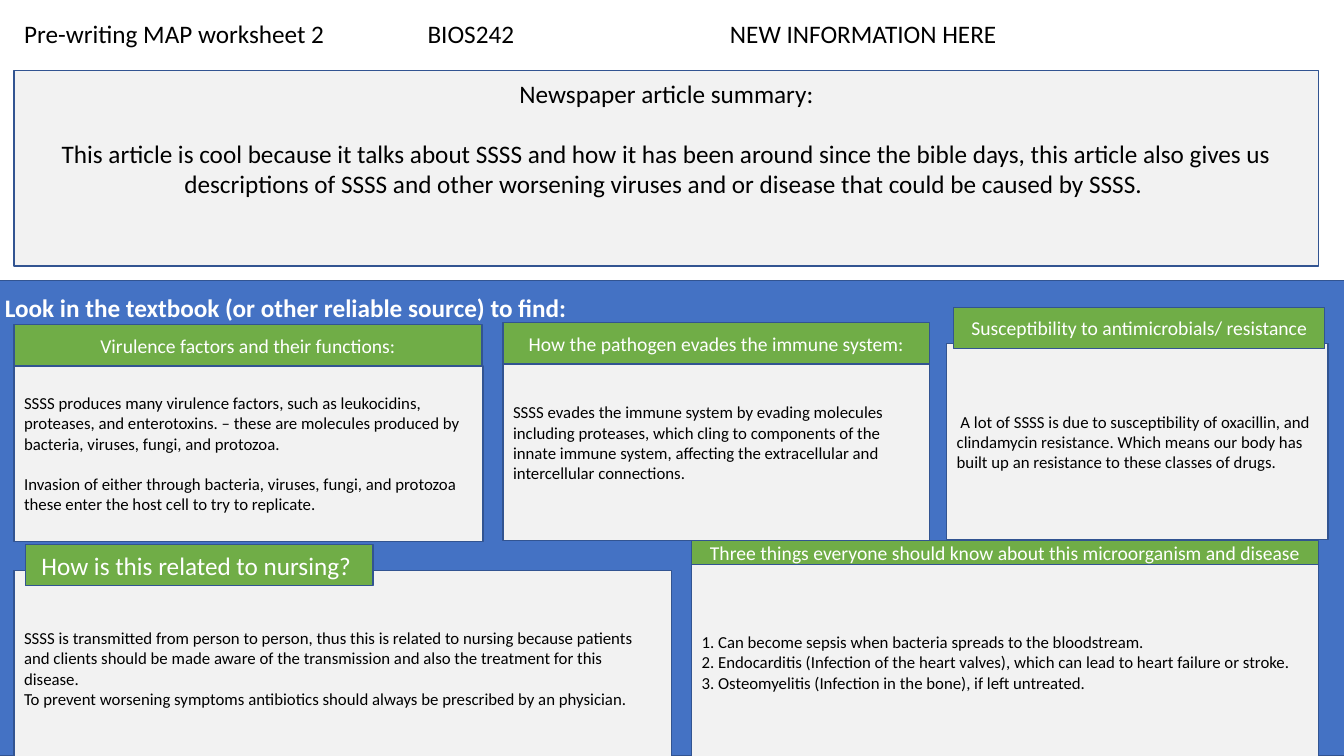
from dataclasses import dataclass

from lxml import etree
from pptx import Presentation
from pptx.dml.color import RGBColor
from pptx.enum.shapes import MSO_SHAPE
from pptx.enum.text import MSO_ANCHOR, MSO_AUTO_SIZE, PP_ALIGN
from pptx.oxml.ns import qn
from pptx.util import Pt

RECT = MSO_SHAPE.RECTANGLE
TOP, MIDDLE = MSO_ANCHOR.TOP, MSO_ANCHOR.MIDDLE
LEFT, CENTER = PP_ALIGN.LEFT, PP_ALIGN.CENTER
NO_FIT = MSO_AUTO_SIZE.NONE
EMU_PER_PX = 9144  # 100 px to the inch
TITLE_ONLY = 5


def px(length):
    return length * EMU_PER_PX


@dataclass(frozen=True)
class Theme:
    font: str = "Calibri"
    band: str = "4472C4"
    panel: str = "F2F2F2"
    heading: str = "70AD47"
    outline: str = "325491"
    dark: str = "000000"
    light: str = "FFFFFF"
    large: int = 18
    medium: int = 14
    small: int = 12


class Worksheet:
    def __init__(self, slide, theme):
        self.slide = slide
        self.theme = theme

    def set_text(self, shape, paragraphs, size, color, align=LEFT, anchor=MIDDLE,
                 bold=False, gap=0, inset=5):
        frame = shape.text_frame
        frame.word_wrap = True
        frame.auto_size = NO_FIT
        frame.vertical_anchor = anchor
        frame.margin_left = frame.margin_right = px(10)
        frame.margin_top, frame.margin_bottom = px(inset), px(5)
        for index, text in enumerate(paragraphs):
            paragraph = frame.add_paragraph() if index else frame.paragraphs[0]
            paragraph.alignment = align
            paragraph.space_before = Pt(gap if index else 0)
            run = paragraph.add_run()
            run.text = text
            run.font.name = self.theme.font
            run.font.size = Pt(size)
            run.font.bold = bold
            run.font.color.rgb = RGBColor.from_string(color)

    def title(self, box, text, tab_stops):
        title = self.slide.shapes.title
        title.left, title.top, title.width, title.height = map(px, box)
        self.set_text(title, [text], self.theme.large, self.theme.dark, anchor=TOP)
        properties = title.text_frame.paragraphs[0]._p.get_or_add_pPr()
        tabs = etree.SubElement(properties, qn("a:tabLst"))
        for stop in tab_stops:
            etree.SubElement(tabs, qn("a:tab"), pos=str(px(stop)), algn="l")

    def box(self, box, fill, paragraphs, size, color, **style):
        shape = self.slide.shapes.add_shape(RECT, *map(px, box))
        shape.shadow.inherit = False
        shape.fill.solid()
        shape.fill.fore_color.rgb = RGBColor.from_string(fill)
        shape.line.color.rgb = RGBColor.from_string(self.theme.outline)
        shape.line.width = Pt(1)
        self.set_text(shape, paragraphs, size, color, **style)

    def band(self, box, text):
        self.box(box, self.theme.band, [text], self.theme.large,
                 self.theme.light, anchor=TOP, bold=True, inset=12)

    def summary(self, box, paragraphs):
        self.box(box, self.theme.panel, paragraphs, self.theme.large,
                 self.theme.dark, align=CENTER, anchor=TOP, gap=21, inset=8)

    def panel(self, box, paragraphs, gap=0):
        self.box(box, self.theme.panel, paragraphs, self.theme.small,
                 self.theme.dark, gap=gap)

    def heading(self, box, text, size):
        self.box(box, self.theme.heading, [text], size, self.theme.light,
                 align=CENTER)


def main():
    deck = Presentation()
    deck.slide_width, deck.slide_height = px(1333), px(750)
    theme = Theme()
    slide = deck.slides.add_slide(deck.slide_layouts[TITLE_ONLY])
    worksheet = Worksheet(slide, theme)

    # Header line and article summary
    worksheet.title((14, 13, 1000, 40),
                    "Pre-writing MAP worksheet 2\t\tBIOS242\t\t\tNEW INFORMATION HERE",
                    range(300, 800, 100))
    worksheet.band((-5, 278, 1354, 472),
                   "Look in the textbook (or other reliable source) to find:")
    worksheet.summary((14, 70, 1294, 194), [
        "Newspaper article summary:",
        "This article is cool because it talks about SSSS and how it has been "
        "around since the bible days, this article also gives us descriptions of "
        "SSSS and other worsening viruses and or disease that could be caused by "
        "SSSS. "])

    # Sections: heading, its box and size, panel box, paragraph gap, paragraphs
    sections = [
        ("Virulence factors and their functions:", (14, 322, 464, 41),
         theme.medium, (14, 363, 465, 174), 14.5, [
             "SSSS produces many virulence factors, such as leukocidins, proteases, "
             "and enterotoxins. – these are molecules produced by bacteria, viruses, "
             "fungi, and protozoa.",
             "Invasion of either through bacteria, viruses, fungi, and protozoa "
             "these enter the host cell to try to replicate."]),
        ("How the pathogen evades the immune system:", (499, 320, 423, 41),
         theme.medium, (499, 342, 423, 194), 0, [
             "SSSS evades the immune system by evading molecules including "
             "proteases, which cling to components of the innate immune system, "
             "affecting the extracellular and intercellular connections."]),
        ("Susceptibility to antimicrobials/ resistance", (946, 305, 368, 41),
         theme.medium, (939, 341, 378, 194), 0, [
             " A lot of SSSS is due to susceptibility of oxacillin, and clindamycin "
             "resistance. Which means our body has built up an resistance to these "
             "classes of drugs."]),
        ("How is this related to nursing? ", (25, 540, 345, 41),
         theme.large, (14, 566, 652, 194), 0, [
             "SSSS is transmitted from person to person, thus this is related to "
             "nursing because patients and clients should be made aware of the "
             "transmission and also the treatment for this disease.",
             "To prevent worsening symptoms antibiotics should always be "
             "prescribed by an physician."]),
        ("Three things everyone should know about this microorganism and disease",
         (686, 536, 622, 24), theme.medium, (686, 560, 622, 194), 0, [
             "1. Can become sepsis when bacteria spreads to the bloodstream.",
             "2. Endocarditis (Infection of the heart valves), which can lead to "
             "heart failure or stroke.",
             "3. Osteomyelitis (Infection in the bone), if left untreated."]),
    ]
    for heading, heading_box, size, panel_box, gap, findings in sections:
        worksheet.panel(panel_box, findings, gap)
        worksheet.heading(heading_box, heading, size)

    deck.save("out.pptx")


if __name__ == "__main__":
    main()
